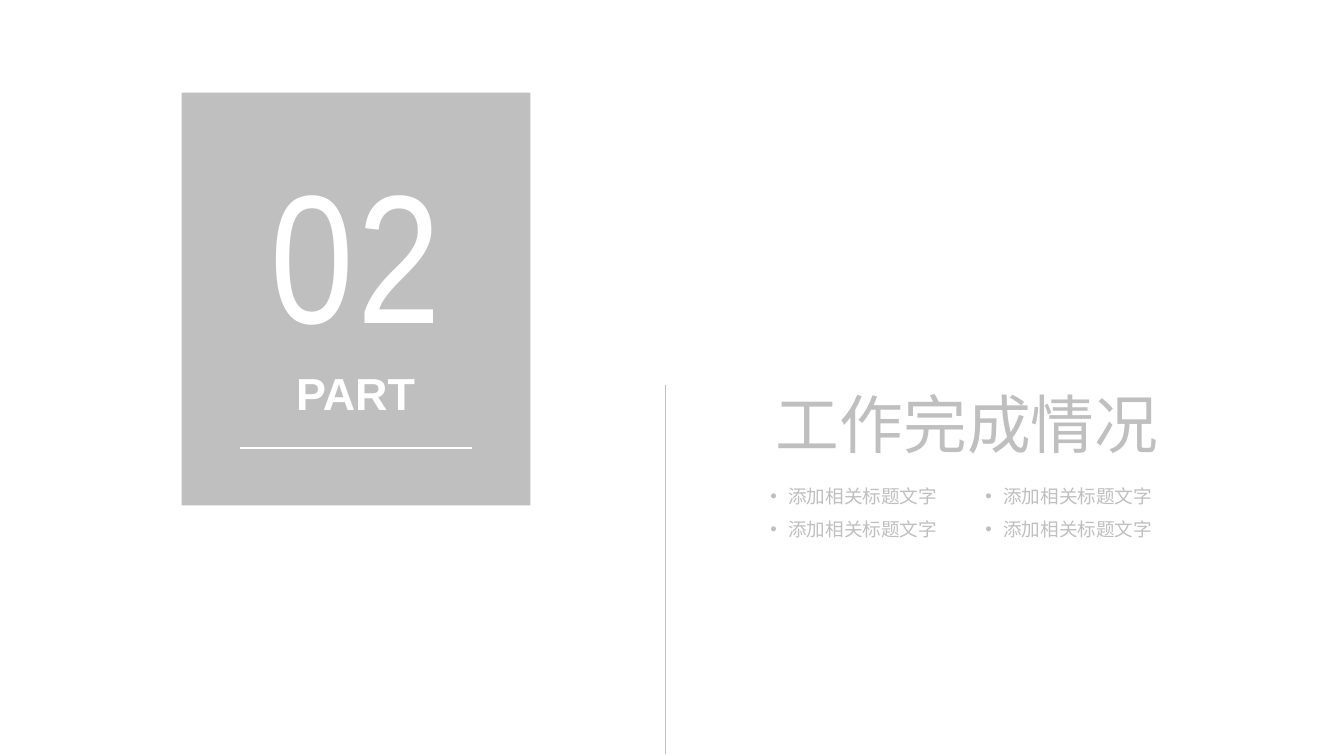
from pptx import Presentation
from pptx.dml.color import RGBColor
from pptx.enum.shapes import MSO_CONNECTOR, MSO_SHAPE
from pptx.enum.text import MSO_ANCHOR, MSO_AUTO_SIZE, PP_ALIGN
from pptx.oxml.xmlchemy import OxmlElement
from pptx.util import Pt

GREY = RGBColor(0xBF, 0xBF, 0xBF)
WHITE = RGBColor(0xFF, 0xFF, 0xFF)


def fill_text(shape, area, lines, size, color, align, font="Arial", bold=False, inset=0):
    shape.left, shape.top, shape.width, shape.height = [Pt(length) for length in area]
    frame = shape.text_frame
    frame.text = "\n".join(lines)
    frame.word_wrap = True
    frame.auto_size = MSO_AUTO_SIZE.NONE
    frame.vertical_anchor = MSO_ANCHOR.TOP
    frame.margin_left = frame.margin_right = Pt(2 * inset)
    frame.margin_top = frame.margin_bottom = Pt(inset)
    for para in frame.paragraphs:
        para.alignment = align
        para.space_before = Pt(0)
        span = para.runs[0]
        span.font.name = font
        span.font.size = Pt(size)
        span.font.bold = bold
        span.font.color.rgb = color
    return frame.paragraphs


def draw_line(page, start_x, start_y, end_x, end_y, color, width):
    line = page.shapes.add_connector(
        MSO_CONNECTOR.STRAIGHT, Pt(start_x), Pt(start_y), Pt(end_x), Pt(end_y)
    )
    line.line.color.rgb = color
    line.line.width = Pt(width)
    line._element.spPr.append(OxmlElement("a:effectLst"))


deck = Presentation()
deck.slide_width = Pt(1012.5)
deck.slide_height = Pt(569.5)
page = deck.slides.add_slide(deck.slide_layouts.get_by_name("Two Content"))
title, *columns = page.placeholders

panel = page.shapes.add_shape(MSO_SHAPE.RECTANGLE, Pt(136.8), Pt(69.8), Pt(262.8), Pt(311))
panel.shadow.inherit = False
panel.fill.solid()
panel.fill.fore_color.rgb = GREY
panel.line.fill.background()

draw_line(page, 180.7, 337.7, 355.7, 337.7, WHITE, 1.5)
draw_line(page, 501.1, 290.2, 501.1, 568, GREY, 0.5)

part_box = page.shapes.add_textbox(0, 0, 0, 0)
fill_text(part_box, (171.4, 275.8, 193, 41), ["PART"], 33.8, WHITE, PP_ALIGN.CENTER, bold=True)

number_box = page.shapes.add_textbox(0, 0, 0, 0)
number = fill_text(
    number_box, (171.4, 102.2, 193, 174.2), ["02"], 137.9, WHITE, PP_ALIGN.CENTER,
    font="Arial Narrow", inset=3.6,
)[0]
number.runs[0].font._element.set("spc", "300")
spacing = number._p.pPr.find("{*}spcBef")
spacing.remove(spacing[0])
percent = OxmlElement("a:spcPct")
percent.set("val", "20000")
spacing.append(percent)

fill_text(title, (584.6, 290.2, 339.8, 58.3), ["工作完成情况"], 48, GREY, PP_ALIGN.LEFT)

for index, column in enumerate(columns):
    area = (580.3 + 162 * index, 365, 144.7, 41.8)
    for para in fill_text(column, area, ["添加相关标题文字"] * 2, 14, GREY, PP_ALIGN.LEFT):
        para.space_after = Pt(8)
        properties = para._p.get_or_add_pPr()
        properties.set("marL", str(Pt(13.5)))
        properties.set("indent", str(-Pt(13.5)))

deck.save("out.pptx")
